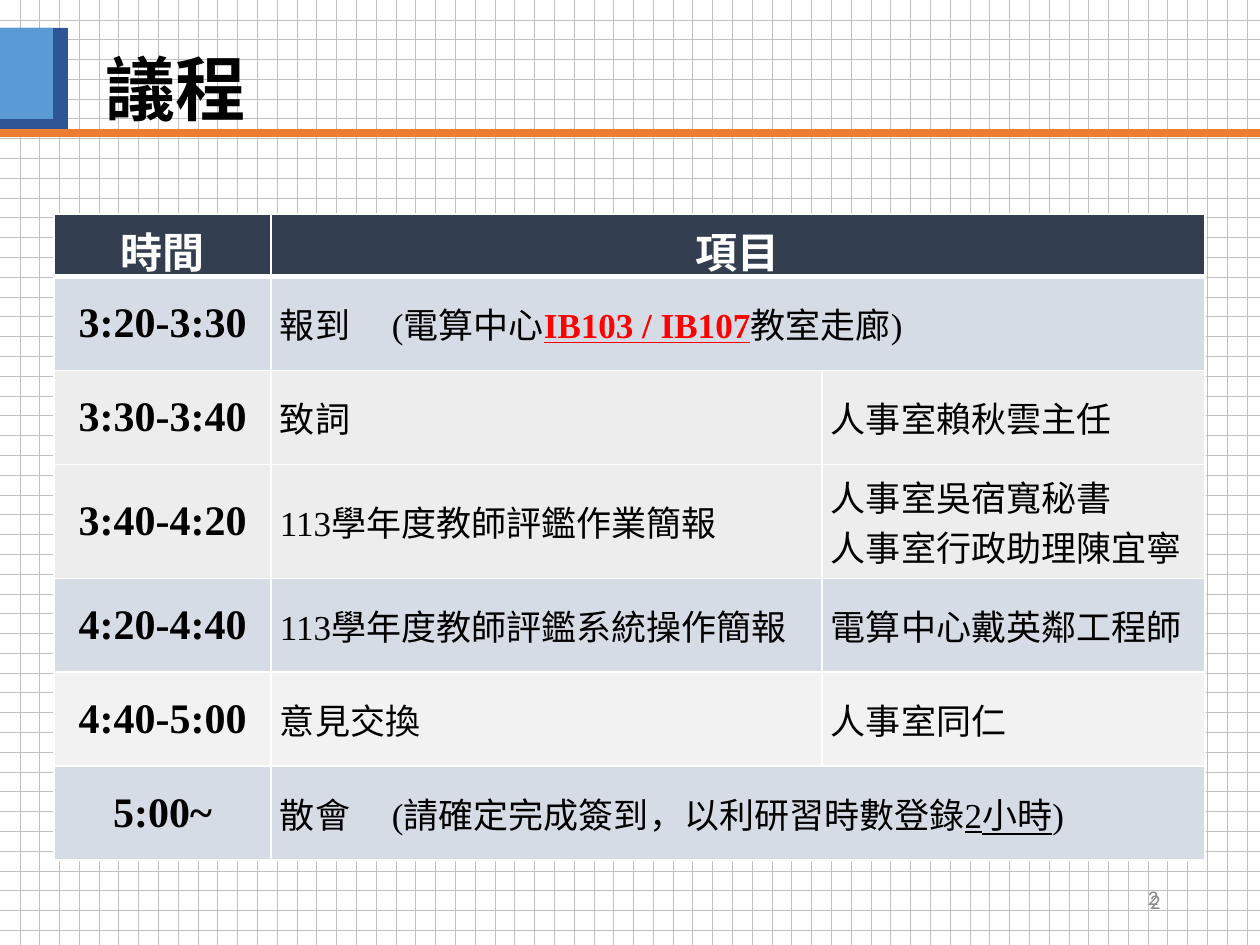
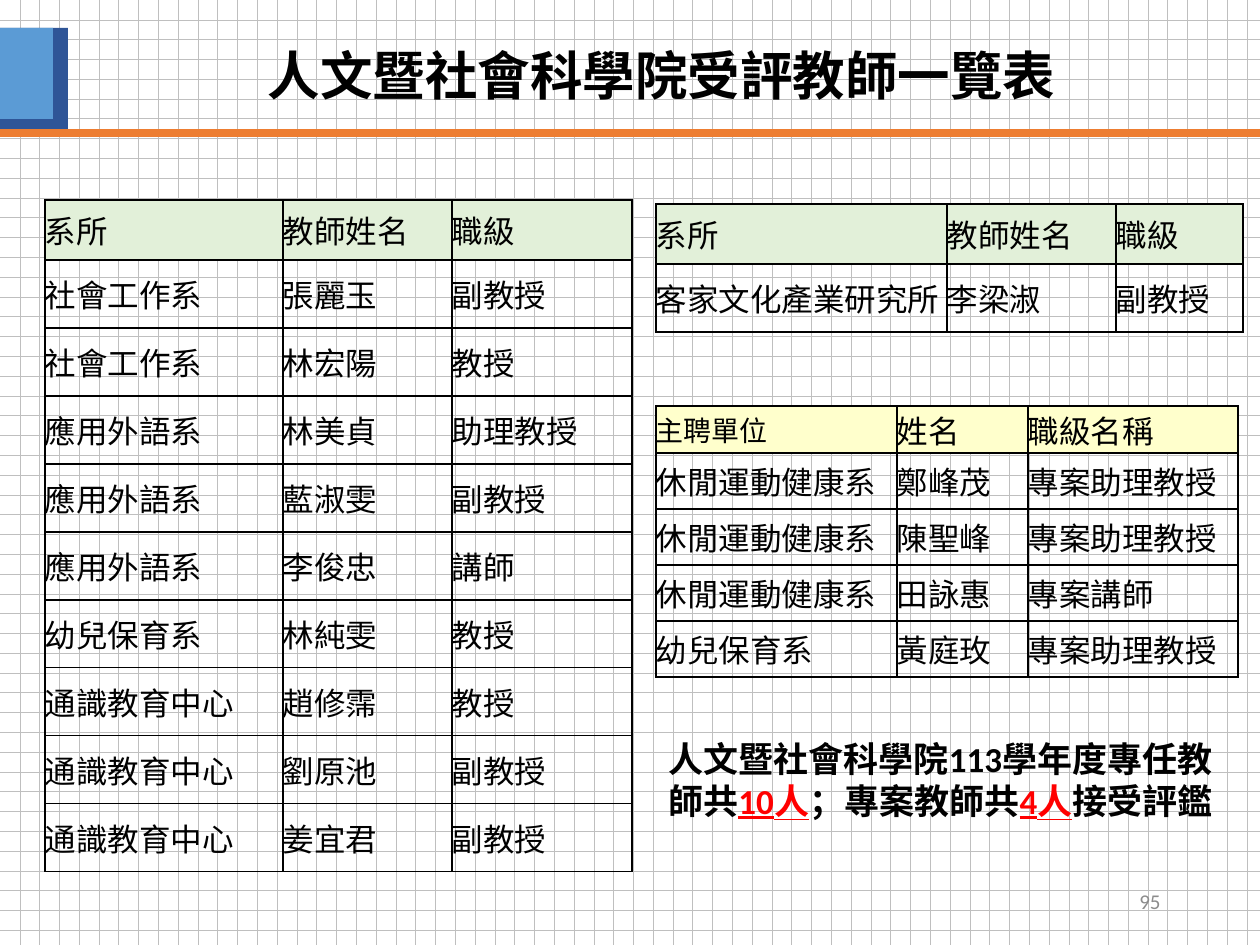
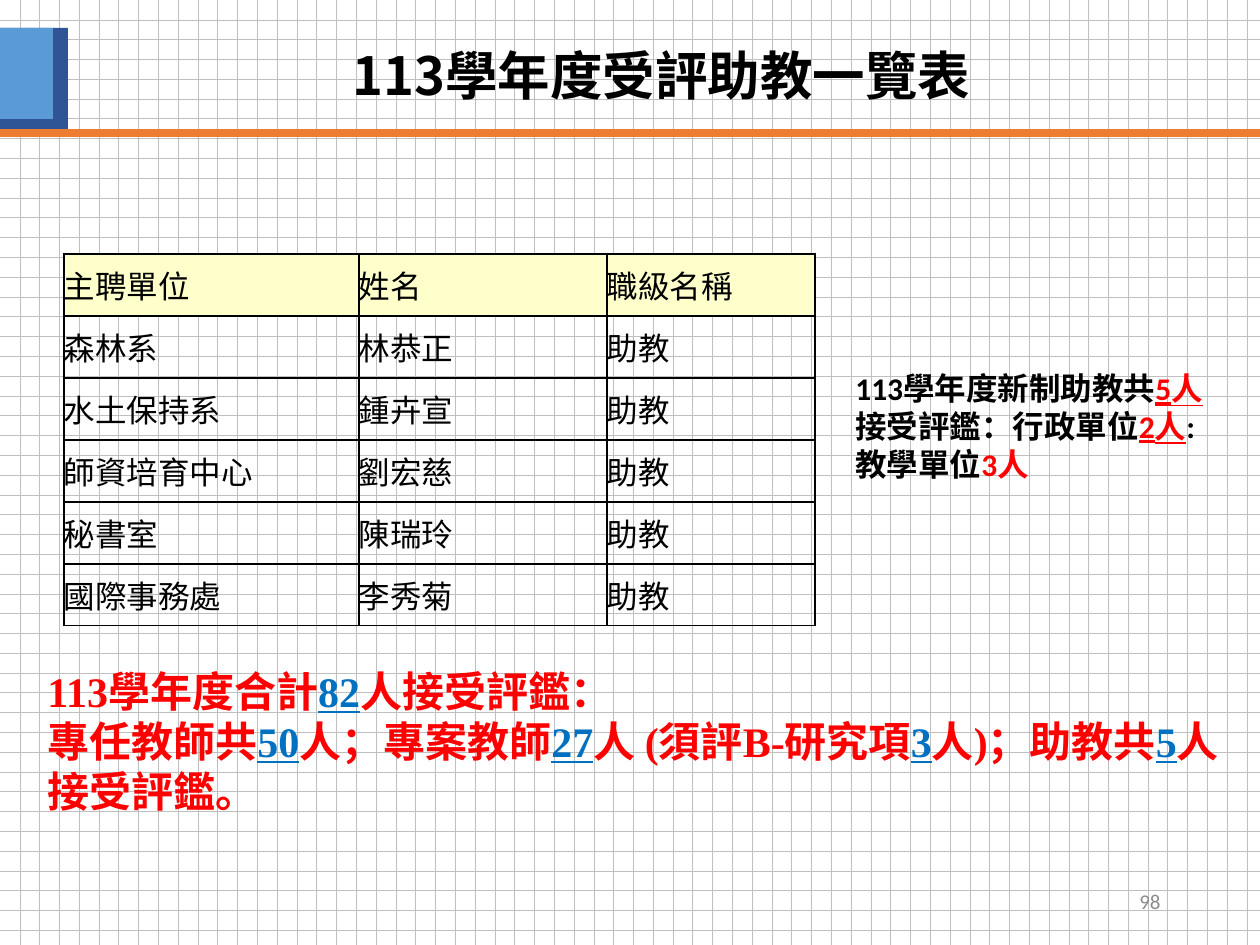
from lxml import etree
from pptx import Presentation
from pptx.dml.color import RGBColor
from pptx.enum.dml import MSO_PATTERN
from pptx.enum.shapes import MSO_CONNECTOR, MSO_SHAPE
from pptx.enum.text import MSO_ANCHOR, PP_ALIGN
from pptx.oxml.ns import qn
from pptx.util import Emu, Pt

LEFT, CENTER, RIGHT, JUSTIFY = PP_ALIGN.LEFT, PP_ALIGN.CENTER, PP_ALIGN.RIGHT, PP_ALIGN.JUSTIFY
TOP, MIDDLE = MSO_ANCHOR.TOP, MSO_ANCHOR.MIDDLE
RECTANGLE, STRAIGHT = MSO_SHAPE.RECTANGLE, MSO_CONNECTOR.STRAIGHT
DOTTED_GRID = MSO_PATTERN.DOTTED_GRID

SCALE = 914400 / 126
COLORS = {
    "black": "000000", "white": "FFFFFF", "grid": "BFBFBF", "page": "8C8C8C",
    "navy": "2F5597", "blue": "5B9BD5", "orange": "ED7D31", "red": "FF0000",
    "total": "0070C0", "agenda_header": "333F50", "mist": "D6DCE5",
    "silver": "EDEDED", "pale": "F2F2F2", "green": "E2F0D9", "yellow": "FFFFCC",
}
SANS, SERIF, BODY, EAST_ASIAN = "Noto Sans CJK SC", "Times New Roman", "Calibri", "Noto Sans CJK TC"
RUN_STYLES = {
    "alert": {"color": "red", "underline": True},
    "alert_bold": {"color": "red", "underline": True, "bold": True},
    "red": {"color": "red"},
    "total": {"color": "total", "underline": True},
    "underline": {"underline": True},
}

TITLE_BOX = (87, 20, 1149, 118)
AGENDA_TITLE_BOX = (93, 39, 601, 97)
PAGE_BOX = (890, 876, 283, 50)
AGENDA_PAGE_BOX = (888, 872, 283, 50)

AGENDA_HEADER = ("時間", "項目")
AGENDA = [
    ("3:20-3:30", "mist", 94, [[["報到\t(電算中心", ("IB103 / IB107", "alert_bold"), "教室走廊)"]]]),
    ("3:30-3:40", "silver", 94, [[["致詞"]], [["人事室賴秋雲主任"]]]),
    ("3:40-4:20", "silver", 114, [[["113學年度教師評鑑作業簡報"]],
                                  [["人事室吳宿寬秘書"], ["人事室行政助理陳宜寧"]]]),
    ("4:20-4:40", "mist", 94, [[["113學年度教師評鑑系統操作簡報"]], [["電算中心戴英鄰工程師"]]]),
    ("4:40-5:00", "pale", 94, [[["意見交換"]], [["人事室同仁"]]]),
    ("5:00~", "mist", 94, [[["散會\t(請確定完成簽到，以利研習時數登錄", ("2小時", "underline"), ")"]]]),
]
AGENDA_COLUMNS = (217, 551, 383)
AGENDA_TAB = 112

FACULTY_HEADER = ("系所", "教師姓名", "職級")
PROJECT_HEADER = ("主聘單位", "姓名", "職級名稱")
FACULTY = [
    ("社會工作系", "張麗玉", "副教授"),
    ("社會工作系", "林宏陽", "教授"),
    ("應用外語系", "林美貞", "助理教授"),
    ("應用外語系", "藍淑雯", "副教授"),
    ("應用外語系", "李俊忠", "講師"),
    ("幼兒保育系", "林純雯", "教授"),
    ("通識教育中心", "趙修霈", "教授"),
    ("通識教育中心", "劉原池", "副教授"),
    ("通識教育中心", "姜宜君", "副教授"),
]
HAKKA_FACULTY = [("客家文化產業研究所", "李梁淑", "副教授")]
PROJECT_FACULTY = [
    ("休閒運動健康系", "鄭峰茂", "專案助理教授"),
    ("休閒運動健康系", "陳聖峰", "專案助理教授"),
    ("休閒運動健康系", "田詠惠", "專案講師"),
    ("幼兒保育系", "黃庭玫", "專案助理教授"),
]
ASSISTANTS = [
    ("森林系", "林恭正", "助教"),
    ("水土保持系", "鍾卉宣", "助教"),
    ("師資培育中心", "劉宏慈", "助教"),
    ("秘書室", "陳瑞玲", "助教"),
    ("國際事務處", "李秀菊", "助教"),
]

ROSTER_SLIDES = [
    {
        "title": "人文暨社會科學院受評教師一覽表",
        "page": "95",
        "rosters": [
            {"at": (45, 200), "columns": (238, 169, 180), "heights": (60, 68),
             "header": FACULTY_HEADER, "fill": "green", "rows": FACULTY},
            {"at": (656, 406), "columns": (241, 131, 210), "heights": (47, 56), "first_size": 16,
             "header": PROJECT_HEADER, "fill": "yellow", "rows": PROJECT_FACULTY},
            {"at": (656, 204), "columns": (291, 169, 127), "heights": (60, 68),
             "header": FACULTY_HEADER, "fill": "green", "rows": HAKKA_FACULTY},
        ],
        "notes": [
            {"box": (656, 731, 582, 97), "size": 20, "font": BODY, "color": "black", "paragraphs": [
                ["人文暨社會科學院113學年度專任教師共", ("10人", "alert"), "；專案教師共",
                 ("4人", "alert"), "接受評鑑"]]},
        ],
    },
    {
        "title": "113學年度受評助教一覽表",
        "page": "98",
        "rosters": [
            {"at": (64, 254), "columns": (295, 248, 208), "heights": (62, 62),
             "header": PROJECT_HEADER, "fill": "yellow", "rows": ASSISTANTS},
        ],
        "notes": [
            {"box": (843, 363, 378, 127), "size": 18, "font": BODY, "color": "black", "paragraphs": [
                ["113學年度新制助教共", ("5人", "alert"), "接受評鑑：行政單位", ("2人", "alert"),
                 ":教學單位", ("3人", "red")]]},
            {"box": (35, 659, 1201, 165), "size": 24, "font": SERIF, "color": "red", "paragraphs": [
                ["113學年度合計", ("82", "total"), "人接受評鑑："],
                ["專任教師共", ("50", "total"), "人；專案教師", ("27", "total"), "人 (須評B-研究項",
                 ("3", "total"), "人)；助教共", ("5", "total"), "人接受評鑑。"]]},
        ],
    },
]


def px(length):
    return Emu(round(length * SCALE))


def rgb(name):
    return RGBColor.from_string(COLORS[name])


def write(text_frame, paragraphs, size, font, color="black", bold=False, align=LEFT, spacing=None):
    for index, pieces in enumerate(paragraphs):
        paragraph = text_frame.add_paragraph() if index else text_frame.paragraphs[0]
        paragraph.alignment = align
        if spacing:
            paragraph.line_spacing = spacing
        for piece in pieces:
            text, style_name = (piece, None) if isinstance(piece, str) else piece
            style = RUN_STYLES.get(style_name, {})
            run = paragraph.add_run()
            run.text = text
            run.font.size = Pt(size)
            run.font.name = font
            run.font.bold = style.get("bold", bold)
            run.font.underline = style.get("underline", False)
            run.font.color.rgb = rgb(style.get("color", color))
            east_asian = etree.SubElement(run.font._element, qn("a:ea"))
            east_asian.set("typeface", SANS if font == SANS else EAST_ASIAN)


def add_text(slide, box, paragraphs, size, font, anchor=TOP, **style):
    text_frame = slide.shapes.add_textbox(*map(px, box)).text_frame
    text_frame.word_wrap = True
    text_frame.vertical_anchor = anchor
    write(text_frame, paragraphs, size, font, **style)


def add_page_number(slide, box, number):
    add_text(slide, box, [[number]], 12, BODY, MIDDLE, color="page", align=RIGHT)


def add_slide(presentation, page):
    slide = presentation.slides.add_slide(presentation.slide_layouts[6])
    for box, color in (((0, 28, 68, 109), "navy"), ((0, 28, 53, 91), "blue")):
        block = slide.shapes.add_shape(RECTANGLE, *map(px, box))
        block.shadow.inherit = False
        block.fill.solid()
        block.fill.fore_color.rgb = rgb(color)
        block.line.fill.background()
    rule = slide.shapes.add_connector(STRAIGHT, px(0), px(133), px(1260), px(133))
    rule.line.color.rgb = rgb("orange")
    rule.line.width = Pt(4.5)
    etree.SubElement(rule._element.spPr, qn("a:effectLst"))
    add_page_number(slide, PAGE_BOX, page)
    return slide


def add_grid(slide, at, columns, heights):
    frame = slide.shapes.add_table(len(heights), len(columns), *map(px, at),
                                   px(sum(columns)), px(sum(heights)))
    table = frame.table
    table.first_row = False
    table.horz_banding = False
    for column, width in zip(table.columns, columns):
        column.width = px(width)
    for row, height in zip(table.rows, heights):
        row.height = px(height)
    return table


def style_cell(cell, fill, border, insets, bottom=1):
    cell.vertical_anchor = MIDDLE
    cell.margin_left = cell.margin_right = px(insets[0])
    cell.margin_top = cell.margin_bottom = px(insets[1])
    if fill:
        cell.fill.solid()
        cell.fill.fore_color.rgb = rgb(fill)
    else:
        cell.fill.background()
    properties = cell._tc.get_or_add_tcPr()
    for index, side in enumerate("LRTB"):
        line = etree.Element(qn(f"a:ln{side}"), w=str(Pt(bottom if side == "B" else 1)))
        solid = etree.SubElement(line, qn("a:solidFill"))
        etree.SubElement(solid, qn("a:srgbClr"), val=COLORS[border])
        properties.insert(index, line)


def add_agenda(slide):
    heights = [62] + [height for _, _, height, _ in AGENDA]
    table = add_grid(slide, (54, 214), AGENDA_COLUMNS, heights)
    fills = ["agenda_header"] + [fill for _, fill, _, _ in AGENDA]
    for row, fill in enumerate(fills):
        for column in range(len(AGENDA_COLUMNS)):
            style_cell(table.cell(row, column), fill, "white", (9, 6), 1 if row else 3)
    for column, label in enumerate(AGENDA_HEADER):
        write(table.cell(0, column).text_frame, [[label]], 24, SANS, "white", True, CENTER)
    table.cell(0, 1).merge(table.cell(0, 2))
    for row, (time, _, _, items) in enumerate(AGENDA, 1):
        write(table.cell(row, 0).text_frame, [[time]], 24, SERIF, bold=True, align=CENTER)
        for column, paragraphs in enumerate(items, 1):
            write(table.cell(row, column).text_frame, paragraphs, 20, SERIF)
        if len(items) == 1:
            table.cell(row, 1).merge(table.cell(row, 2))
            properties = table.cell(row, 1).text_frame.paragraphs[0]._p.get_or_add_pPr()
            tabs = etree.SubElement(properties, qn("a:tabLst"))
            etree.SubElement(tabs, qn("a:tab"), pos=str(px(AGENDA_TAB)), algn="l")


def add_roster(slide, roster):
    header_height, row_height = roster["heights"]
    rows = [roster["header"]] + roster["rows"]
    heights = [header_height] + [row_height] * len(roster["rows"])
    table = add_grid(slide, roster["at"], roster["columns"], heights)
    for row, values in enumerate(rows):
        for column, value in enumerate(values):
            cell = table.cell(row, column)
            style_cell(cell, None if row else roster["fill"], "black", (0, 0))
            size = roster.get("first_size", 18) if row == column == 0 else 18
            write(cell.text_frame, [[value]], size, SERIF, align=JUSTIFY)


def main():
    presentation = Presentation()
    presentation.slide_width, presentation.slide_height = px(1260), px(945)
    background = presentation.slide_master.background.fill
    background.patterned()
    background.pattern = DOTTED_GRID
    background.fore_color.rgb = rgb("grid")
    background.back_color.rgb = rgb("white")

    agenda_slide = add_slide(presentation, "2")
    add_page_number(agenda_slide, AGENDA_PAGE_BOX, "2")
    add_agenda(agenda_slide)
    add_text(agenda_slide, AGENDA_TITLE_BOX, [["議程"]], 40, SANS, bold=True)

    for content in ROSTER_SLIDES:
        slide = add_slide(presentation, content["page"])
        add_text(slide, TITLE_BOX, [[content["title"]]], 30, SANS, MIDDLE,
                 bold=True, align=CENTER, spacing=0.9)
        for roster in content["rosters"]:
            add_roster(slide, roster)
        for note in content["notes"]:
            add_text(slide, **note, bold=True)

    presentation.save("out.pptx")


if __name__ == "__main__":
    main()
